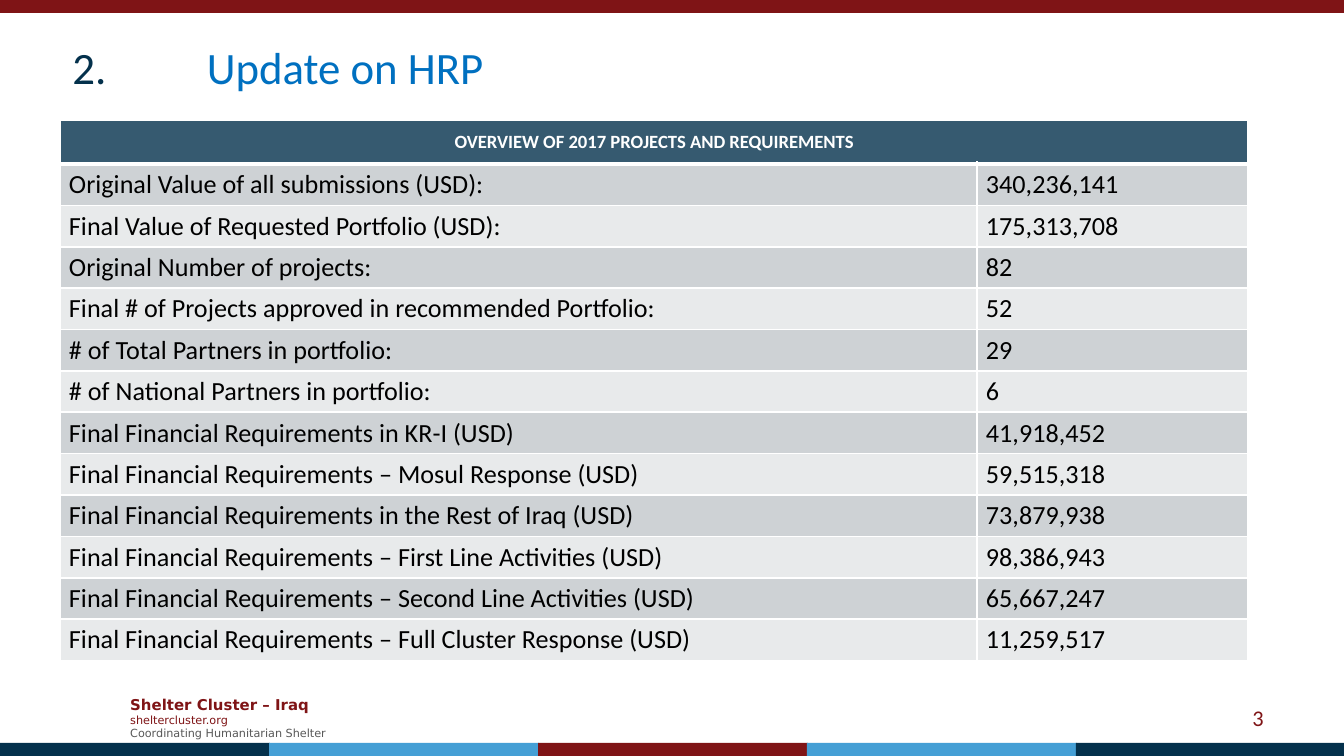
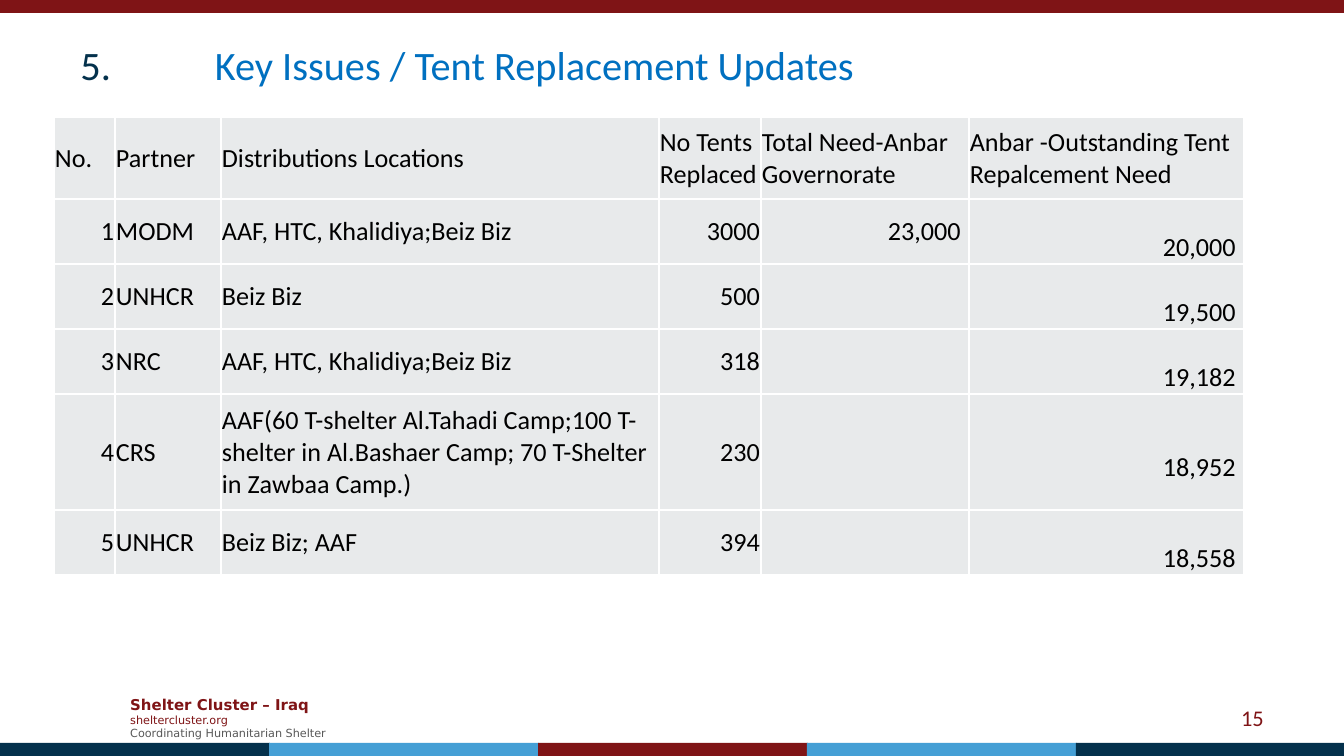
from dataclasses import dataclass

from lxml import etree
from pptx import Presentation
from pptx.dml.color import RGBColor
from pptx.enum.shapes import MSO_SHAPE
from pptx.enum.text import MSO_ANCHOR, MSO_AUTO_SIZE, PP_ALIGN
from pptx.oxml.ns import qn
from pptx.util import Emu, Pt

RECT = MSO_SHAPE.RECTANGLE
MIDDLE = MSO_ANCHOR.MIDDLE
NO_FIT = MSO_AUTO_SIZE.NONE
LEFT, CENTER, RIGHT = PP_ALIGN.LEFT, PP_ALIGN.CENTER, PP_ALIGN.RIGHT
PX_PER_INCH = 134.4


@dataclass(frozen=True)
class Theme:
    font: str = "Calibri"
    footer_font: str = "DejaVu Sans"
    red: str = "7F1416"
    navy: str = "04314C"
    sky: str = "459FD5"
    title: str = "0070C0"
    grey: str = "595959"
    header: str = "365A70"
    dark_row: str = "CED2D5"
    light_row: str = "E8EAEB"
    white: str = "FFFFFF"
    black: str = "000000"
    body_size: float = 14
    header_size: float = 10
    number_size: float = 12
    brand_size: float = 8
    footer_size: float = 6


T = Theme()

OVERVIEW_TITLE = "OVERVIEW OF 2017 PROJECTS AND REQUIREMENTS"
OVERVIEW = [
    ("Original Value of all submissions (USD):", "340,236,141"),
    ("Final Value of Requested Portfolio (USD):", "175,313,708"),
    ("Original Number of projects:", "82"),
    ("Final # of Projects approved in recommended Portfolio:", "52"),
    ("# of Total Partners in portfolio:", "29"),
    ("# of National Partners in portfolio:", "6"),
    ("Final Financial Requirements in KR-I (USD)", "41,918,452"),
    ("Final Financial Requirements – Mosul Response (USD)", "59,515,318"),
    ("Final Financial Requirements in the Rest of Iraq (USD)", "73,879,938"),
    ("Final Financial Requirements – First Line Activities (USD)", "98,386,943"),
    ("Final Financial Requirements – Second Line Activities (USD)", "65,667,247"),
    ("Final Financial Requirements – Full Cluster Response (USD)", "11,259,517"),
]

TENTS = [
    ("No.", "Partner", "Distributions Locations", "No Tents Replaced",
     "Total Need-Anbar Governorate", "Anbar -Outstanding Tent Repalcement Need"),
    ("1", "MODM", "AAF, HTC, Khalidiya;Beiz Biz", "3000", "23,000", "20,000"),
    ("2", "UNHCR", "Beiz Biz", "500", "", "19,500"),
    ("3", "NRC", "AAF, HTC, Khalidiya;Beiz Biz", "318", "", "19,182"),
    ("4", "CRS", "AAF(60 T-shelter Al.Tahadi Camp;100 T-shelter in Al.Bashaer Camp; "
     "70 T-Shelter in Zawbaa Camp.)", "230", "", "18,952"),
    ("5", "UNHCR", "Beiz Biz; AAF", "394", "", "18,558"),
]


def px(n):
    return Emu(round(n * 914400 / PX_PER_INCH))


def rgb(value):
    return RGBColor.from_string(value)


def style(p, size, color=None, bold=False, align=LEFT, font=T.font):
    p.alignment = align
    p.font.name, p.font.size, p.font.bold = font, Pt(size), bold
    if color:
        p.font.color.rgb = rgb(color)


def add_band(s, box, color):
    sp = s.shapes.add_shape(RECT, *map(px, box))
    sp.shadow.inherit = False
    sp.fill.solid()
    sp.fill.fore_color.rgb = rgb(color)
    sp.line.fill.background()


def add_text(s, box):
    tf = s.shapes.add_textbox(*map(px, box)).text_frame
    tf.word_wrap = True
    tf.vertical_anchor = MIDDLE
    return tf


def add_footer(s, box, number):
    x, y, w, h = box
    tf = add_text(s, (x + 117, y, 233, 59))
    lines = [
        ("Shelter Cluster – Iraq", T.brand_size, T.red, True),
        ("sheltercluster.org", T.footer_size, T.red, False),
        ("Coordinating Humanitarian Shelter", T.footer_size, T.grey, False),
    ]
    for i, (text, size, color, bold) in enumerate(lines):
        p = tf.add_paragraph() if i else tf.paragraphs[0]
        p.text = text
        style(p, size, color, bold, font=T.footer_font)

    p = add_text(s, (x + w - 380, y + 10, 313, 40)).paragraphs[0]
    p.text = number
    style(p, T.number_size, T.red, align=RIGHT)

    for i, color in enumerate((T.navy, T.sky, T.red, T.sky, T.navy)):
        add_band(s, (x + 269 * i, y + h - 13, 270, 13), color)


def add_title(s, box, number, text, size):
    title = s.shapes.title
    title.left, title.top, title.width, title.height = map(px, box)
    tf = title.text_frame
    tf.word_wrap = True
    tf.auto_size = NO_FIT
    tf.vertical_anchor = MIDDLE
    p = tf.paragraphs[0]
    tabs = etree.SubElement(p._p.get_or_add_pPr(), qn("a:tabLst"))
    etree.SubElement(tabs, qn("a:tab"), pos="914400", algn="l")
    style(p, size)
    for part, color in ((number + "\t", T.navy), (text, T.title)):
        r = p.add_run()
        r.text = part
        r.font.color.rgb = rgb(color)


def add_table(s, x, y, cols, rows):
    frame = s.shapes.add_table(len(rows), len(cols), px(x), px(y), px(sum(cols)), px(sum(rows)))
    table = frame.table
    table.first_row = table.horz_banding = False
    for col, width in zip(table.columns, cols):
        col.width = px(width)
    for row, height in zip(table.rows, rows):
        row.height = px(height)
    return table


def set_borders(cell, top=1, bottom=1):
    tc_pr = cell._tc.get_or_add_tcPr()
    for side, width in (("L", 1), ("R", 1), ("T", top), ("B", bottom)):
        ln = etree.SubElement(tc_pr, qn("a:ln" + side), w=str(Pt(width)))
        fill = etree.SubElement(ln, qn("a:solidFill"))
        etree.SubElement(fill, qn("a:srgbClr"), val=T.white)


def fill_cell(cell, text, fill, insets, size=T.body_size, color=T.black, bold=False,
              align=LEFT, top=1, bottom=1):
    set_borders(cell, top, bottom)
    cell.fill.solid()
    cell.fill.fore_color.rgb = rgb(fill)
    cell.vertical_anchor = MIDDLE
    cell.margin_left, cell.margin_top, cell.margin_right, cell.margin_bottom = map(px, insets)
    p = cell.text_frame.paragraphs[0]
    p.text = text
    style(p, size, color, bold, align)


def add_overview_table(s, x, y):
    insets = (9, 5, 9, 5)
    table = add_table(s, x, y, (917, 271), [44] + [41] * len(OVERVIEW))
    table.cell(0, 0).merge(table.cell(0, 1))
    for j, text in enumerate((OVERVIEW_TITLE, "")):
        fill_cell(table.cell(0, j), text, T.header, insets, T.header_size, T.white,
                  True, CENTER, bottom=3)
    for i, row in enumerate(OVERVIEW, 1):
        fill = T.dark_row if i % 2 else T.light_row
        for j, text in enumerate(row):
            fill_cell(table.cell(i, j), text, fill, insets, top=3 if i == 1 else 1)


def add_tents_table(s, x, y):
    table = add_table(s, x, y, (61, 106, 438, 102, 208, 275), (82, 65, 65, 65, 116, 65))
    for i, row in enumerate(TENTS):
        for j, text in enumerate(row):
            numeric = i > 0 and j not in (1, 2)
            right = 8 if numeric and j >= 4 else 1
            top = 32 if numeric and j == 5 else 1
            fill_cell(table.cell(i, j), text, T.light_row, (1, top, right, 0),
                      align=RIGHT if numeric else LEFT)


def add_slide(prs, number):
    s = prs.slides.add_slide(prs.slide_layouts[5])
    add_band(s, (0, 0, 1344, 13), T.red)
    add_footer(s, (0, 688, 1344, 68), number)
    return s


def main():
    prs = Presentation()
    prs.slide_width, prs.slide_height = px(1344), px(756)

    s = add_slide(prs, "3")
    add_title(s, (59, 36, 1218, 62), "2.", "Update on HRP", 24)
    add_overview_table(s, 60, 120)

    s = add_slide(prs, "15")
    add_title(s, (67, 33, 1210, 62), "5.", "Key Issues / Tent Replacement Updates", 21.6)
    add_tents_table(s, 54, 117)

    prs.save("out.pptx")


if __name__ == "__main__":
    main()
